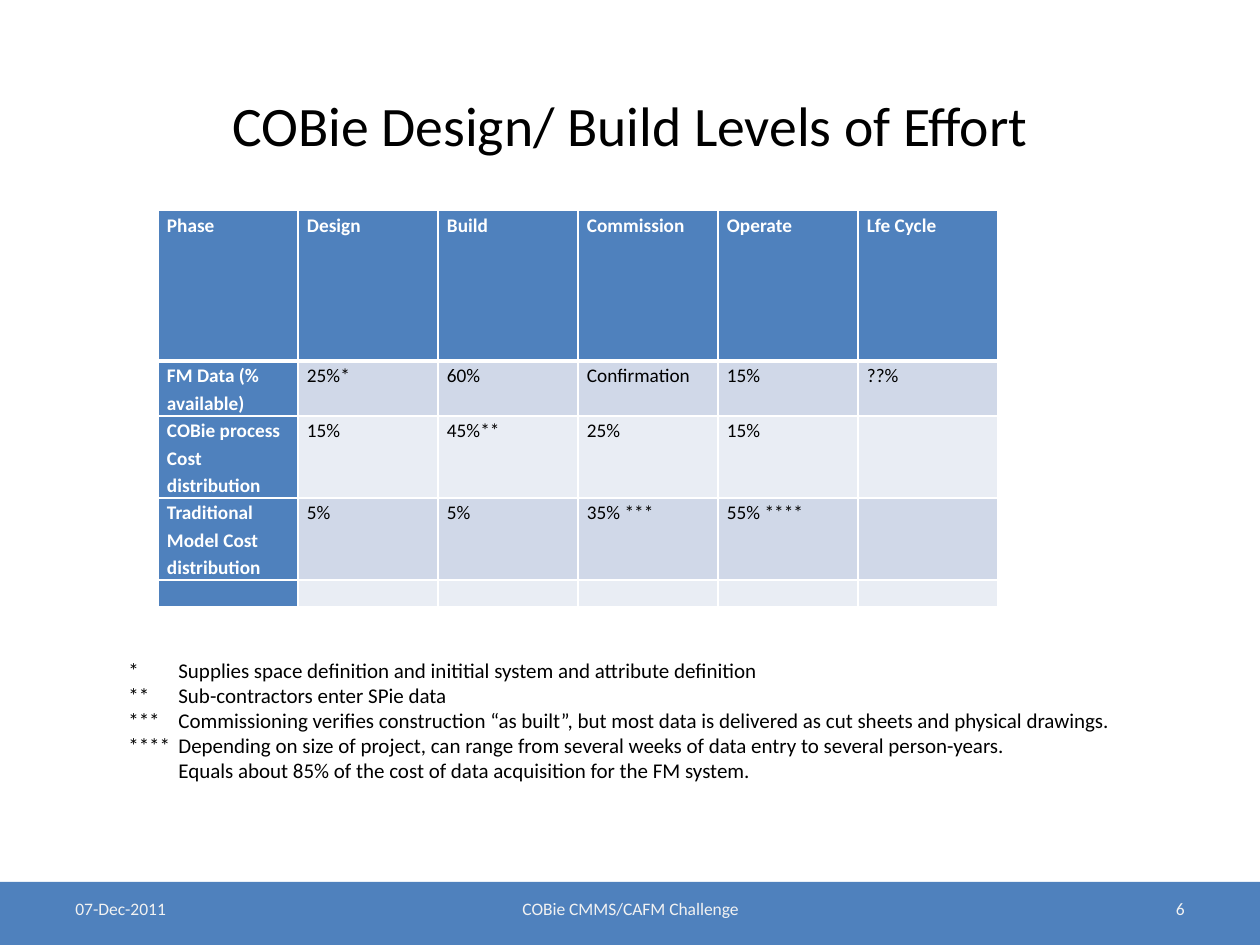
from lxml.etree import SubElement
from pptx import Presentation
from pptx.dml.color import RGBColor
from pptx.enum.shapes import MSO_SHAPE
from pptx.enum.text import MSO_ANCHOR, PP_ALIGN
from pptx.oxml.ns import qn
from pptx.util import Pt

EMU_PER_PX = 914400 // 126
BLUE, WHITE, BLACK, PALE = "4F81BD", "FFFFFF", "000000", "F2F2F2"
BANDS = ["D0D8E8", "E9EDF4"]
COLUMN_WIDTH = 140
ROW_HEIGHTS = [151, 55, 82, 82, 27]
ROWS = [
    ["Phase", "Design", "Build", "Commission", "Operate", "Lfe Cycle"],
    ["FM Data (% available)", "25%*", "60%", "Confirmation", "15%", "??%"],
    ["COBie process\nCost distribution", "15%", "45%**", "25%", "15%", ""],
    ["Traditional Model Cost distribution", "5%", "5%", "35% ***", "55% ****", ""],
    [""] * 6,
]
FOOTNOTES = [
    "*\tSupplies space definition and inititial system and attribute definition",
    "**\tSub-contractors enter SPie data",
    "***\tCommissioning verifies construction “as built”, but most data is delivered as cut sheets and physical drawings.",
    "****\tDepending on size of project, can range from several weeks of data entry to several person-years.",
    "\tEquals about 85% of the cost of data acquisition for the FM system.",
]
FOOTERS = [
    (63, 294, "07-Dec-2011", PP_ALIGN.LEFT),
    (431, 399, "COBie CMMS/CAFM Challenge", PP_ALIGN.CENTER),
    (903, 294, "6", PP_ALIGN.RIGHT),
]


def px(length):
    """Turn pixels into EMU."""
    return length * EMU_PER_PX


def color(value):
    """Turn a hex string into a colour."""
    return RGBColor.from_string(value)


def style_paragraph(paragraph, size, font_color, bold=False, align=PP_ALIGN.LEFT):
    """Set the font and alignment of a paragraph."""
    paragraph.alignment = align
    paragraph.font.name = "Calibri"
    paragraph.font.size = Pt(size)
    paragraph.font.bold = bold
    paragraph.font.color.rgb = color(font_color)


def add_text(slide, box, lines, size, font_color, align=PP_ALIGN.LEFT, anchor=MSO_ANCHOR.MIDDLE):
    """Add a text box with one paragraph for each line."""
    frame = slide.shapes.add_textbox(*map(px, box)).text_frame
    frame.word_wrap = True
    frame.vertical_anchor = anchor
    frame.text = "\n".join(lines)
    for paragraph in frame.paragraphs:
        style_paragraph(paragraph, size, font_color, align=align)
    return frame


def add_footer(slide):
    """Add the blue band and its three texts."""
    band = slide.shapes.add_shape(MSO_SHAPE.RECTANGLE, *map(px, (0, 882, 1260, 63)))
    band.shadow.inherit = False
    band.fill.solid()
    band.fill.fore_color.rgb = color(BLUE)
    band.line.fill.background()
    for left, width, text, align in FOOTERS:
        add_text(slide, (left, 892, width, 34), [text], 10, PALE, align)


def add_footnotes(slide):
    """Add the footnotes with a hanging indent after the stars."""
    frame = add_text(slide, (116, 651, 1081, 165), FOOTNOTES, 12, BLACK, anchor=MSO_ANCHOR.TOP)
    for paragraph in frame.paragraphs:
        properties = paragraph._p.get_or_add_pPr()
        properties.set("marL", str(px(50)))
        properties.set("indent", str(px(-50)))


def set_borders(cell, top, bottom):
    """Draw white cell borders with the given top and bottom widths."""
    properties = cell._tc.get_or_add_tcPr()
    for index, (side, width) in enumerate(zip("LRTB", (1, 1, top, bottom))):
        line = properties.makeelement(qn(f"a:ln{side}"), {"w": str(Pt(width))})
        fill = SubElement(line, qn("a:solidFill"))
        SubElement(fill, qn("a:srgbClr"), val=WHITE)
        properties.insert(index, line)


def fill_cell(cell, text, row, column):
    """Write and format one table cell."""
    heading = row == 0 or column == 0
    cell.margin_left = cell.margin_right = px(9)
    cell.margin_top = cell.margin_bottom = 0
    cell.fill.solid()
    cell.fill.fore_color.rgb = color(BLUE if heading else BANDS[(row - 1) % 2])
    set_borders(cell, 3 if row == 1 else 1, 3 if row == 0 else 1)
    cell.text = text
    for paragraph in cell.text_frame.paragraphs:
        style_paragraph(paragraph, 11, WHITE if heading else BLACK, heading)
        paragraph.line_spacing = 1.15
        if not text:
            SubElement(paragraph._p, qn("a:endParaRPr"), sz="1100")


def add_effort_table(slide):
    """Add the table of effort by phase."""
    columns = len(ROWS[0])
    box = (158, 210, COLUMN_WIDTH * columns, sum(ROW_HEIGHTS))
    table = slide.shapes.add_table(len(ROWS), columns, *map(px, box)).table
    table.first_col = True
    for column in table.columns:
        column.width = px(COLUMN_WIDTH)
    for row, (height, texts) in enumerate(zip(ROW_HEIGHTS, ROWS)):
        table.rows[row].height = px(height)
        for column, text in enumerate(texts):
            fill_cell(table.cell(row, column), text, row, column)


def main():
    """Build and save the slide."""
    presentation = Presentation()
    presentation.slide_width, presentation.slide_height = px(1260), px(945)
    slide = presentation.slides.add_slide(presentation.slide_layouts[6])
    add_footer(slide)
    title = add_text(slide, (63, 38, 1134, 158), ["COBie Design/ Build Levels of Effort"],
                     31.8, BLACK, PP_ALIGN.CENTER)
    title.margin_top = px(20)
    add_effort_table(slide)
    add_footnotes(slide)
    presentation.save("out.pptx")


if __name__ == "__main__":
    main()
